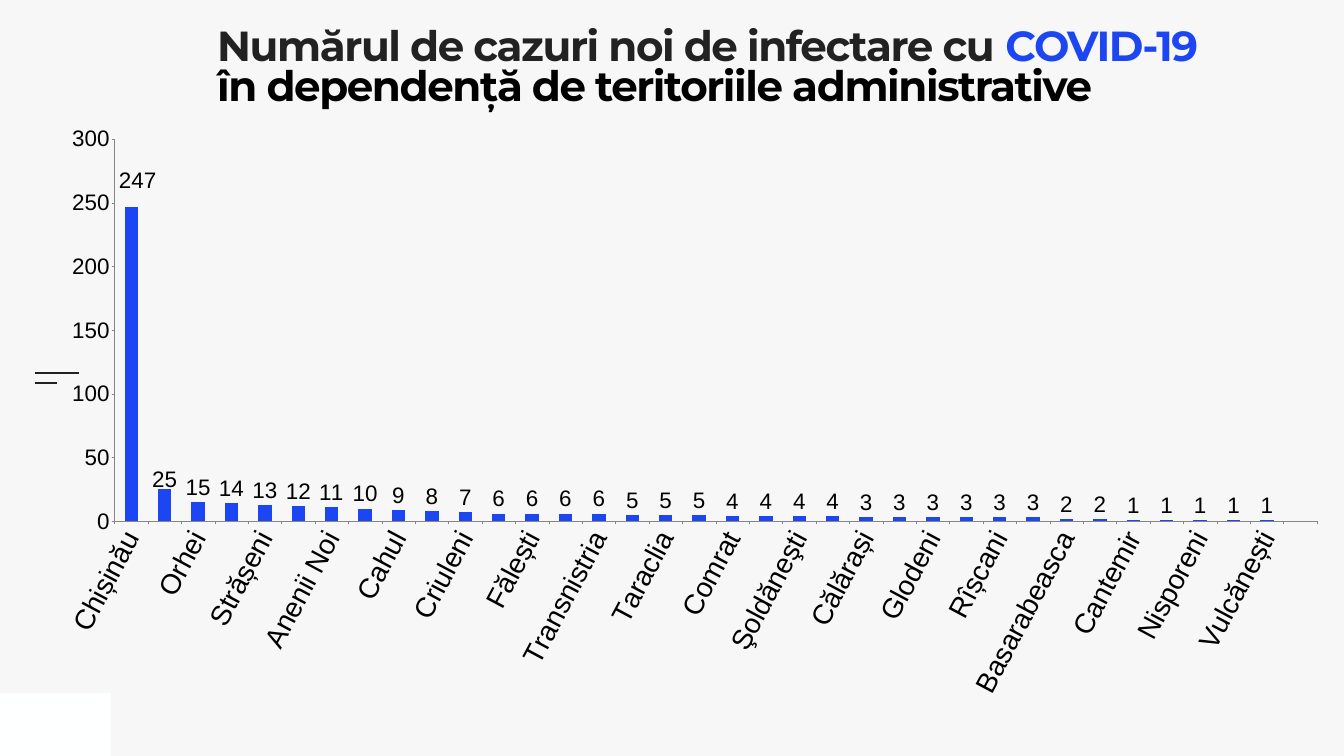
import dataclasses

import lxml.etree
import pptx
import pptx.chart.data
import pptx.dml.color
import pptx.enum.chart
import pptx.enum.shapes
import pptx.enum.text
import pptx.oxml.ns
import pptx.util

Cm, Pt = pptx.util.Cm, pptx.util.Pt
qn = pptx.oxml.ns.qn


@dataclasses.dataclass(frozen=True)
class Theme:
    """Colours, fonts and type sizes of the slide."""
    background: str = "F7F7F7"
    corner: str = "FEFFFF"
    ink: str = "222222"
    black: str = "000000"
    accent: str = "1D46F3"
    axis: str = "868686"
    title_font: str = "Montserrat"
    chart_font: str = "Arial"
    title_size: int = 60
    category_size: int = 40
    value_size: int = 32


@dataclasses.dataclass(frozen=True)
class Box:
    """A region of the slide in centimetres."""
    left: float
    top: float
    width: float
    height: float

    def lengths(self):
        """Return left, top, width and height as lengths."""
        return [Cm(side) for side in dataclasses.astuple(self)]


THEME = Theme()

CASES = {
    "Chișinău": 247, "Edineț": 25, "Orhei": 15, "Soroca": 14, "Strășeni": 13,
    "Ialoveni": 12, "Anenii Noi": 11, "Căușeni": 10, "Cahul": 9, "Hîncești": 8,
    "Criuleni": 7, "Drochia": 6, "Fălești": 6, "Rezina": 6, "Transnistria": 6,
    "Bălți": 5, "Taraclia": 5, "Ungheni": 5, "Comrat": 4, "Dondușeni": 4,
    "Şoldăneşti": 4, "Telenești": 4, "Călărași": 3, "Florești": 3, "Glodeni": 3,
    "Leova": 3, "Rîșcani": 3, "Ștefan Vodă": 3, "Basarabeasca": 2,
    "Ceadîr-Lunga": 2, "Cantemir": 1, "Cimișlia": 1, "Nisporeni": 1,
    "Ocnița": 1, "Vulcănești": 1, "": None,
}

TITLE = [
    [("Numărul de cazuri noi de infectare cu ", THEME.ink), ("COVID-19", THEME.accent)],
    [("în dependență de teritoriile administrative", THEME.black)],
]

LABEL_SHIFTS = {0: (0.005, -0.02), 1: (0, 0.008)}


def rgb(colour):
    """Turn a hex string into a colour."""
    return pptx.dml.color.RGBColor.from_string(colour)


def apply(target, values):
    """Set each named attribute on the target."""
    for name, value in values.items():
        setattr(target, name, value)


def style_font(font, size, colour, name, **more):
    """Give a font its size, colour and face."""
    apply(font, {"size": Pt(size), "name": name, **more})
    font.color.rgb = rgb(colour)


def add_layout(parent, position, **values):
    """Insert a manual layout at a child position of a chart element."""
    for old in parent.findall(qn("c:layout")):
        parent.remove(old)
    layout = lxml.etree.Element(qn("c:layout"))
    manual = lxml.etree.SubElement(layout, qn("c:manualLayout"))
    for name, value in values.items():
        lxml.etree.SubElement(manual, qn(f"c:{name}")).set("val", str(value))
    parent.insert(position, layout)


def build_corner(page, box):
    """Place the plain block in the lower left corner."""
    block = page.shapes.add_shape(pptx.enum.shapes.MSO_SHAPE.RECTANGLE, *box.lengths())
    block.shadow.inherit = False
    block.fill.solid()
    block.fill.fore_color.rgb = rgb(THEME.corner)
    block.line.fill.background()


def build_menu_mark(page, box):
    """Draw a long line over a half-length one."""
    for drop, share in ((0, 1), (box.height, 0.5)):
        level = Cm(box.top + drop)
        line = page.shapes.add_connector(
            pptx.enum.shapes.MSO_CONNECTOR.STRAIGHT,
            Cm(box.left), level, Cm(box.left + box.width * share), level)
        line.line.color.rgb = rgb(THEME.ink)
        line.line.width = Pt(3)
        lxml.etree.SubElement(line._element.spPr, qn("a:effectLst"))


def build_title(page, box):
    """Write the two-line title."""
    frame = page.shapes.add_textbox(*box.lengths()).text_frame
    apply(frame, {"word_wrap": True, "margin_left": 0, "margin_top": 0,
                  "margin_right": 0, "margin_bottom": 0})
    for number, line in enumerate(TITLE):
        para = frame.add_paragraph() if number else frame.paragraphs[0]
        apply(para, {"line_spacing": 0.8, "alignment": pptx.enum.text.PP_ALIGN.LEFT})
        for text, colour in line:
            span = para.add_run()
            span.text = text
            style_font(span.font, THEME.title_size, colour, THEME.title_font, bold=True)
            span._r.get_or_add_rPr().set("spc", "-200")


def style_axes(chart):
    """Format both axes and turn the category names."""
    tick = pptx.enum.chart.XL_TICK_MARK
    sizes = ((chart.category_axis, THEME.category_size), (chart.value_axis, THEME.value_size))
    for axis, size in sizes:
        apply(axis, {"has_major_gridlines": False, "major_tick_mark": tick.OUTSIDE,
                     "minor_tick_mark": tick.NONE})
        style_font(axis.tick_labels.font, size, THEME.black, THEME.chart_font)
        axis.format.line.color.rgb = rgb(THEME.axis)
        axis.format.line.width = Pt(0.75)
    apply(chart.value_axis, {"minimum_scale": 0, "maximum_scale": 300, "major_unit": 50})
    category = chart.category_axis._element
    category.find(qn("c:txPr")).find(qn("a:bodyPr")).set("rot", str(-62 * 60000))
    skip = lxml.etree.Element(qn("c:tickLblSkip"))
    skip.set("val", "2")
    category.find(qn("c:noMultiLvlLbl")).addprevious(skip)


def style_columns(plot):
    """Colour the columns and label them with their values."""
    apply(plot, {"gap_width": 150, "vary_by_categories": False, "has_data_labels": True})
    series = plot.series[0]
    series.format.fill.solid()
    series.format.fill.fore_color.rgb = rgb(THEME.accent)
    above = pptx.enum.chart.XL_LABEL_POSITION.OUTSIDE_END
    for labels in (plot.data_labels, series.data_labels):
        apply(labels, {"show_value": True, "position": above})
        style_font(labels.font, THEME.value_size, THEME.black, THEME.chart_font)
    for index, (across, down) in LABEL_SHIFTS.items():
        label = series.points[index].data_label
        style_font(label.font, THEME.value_size, THEME.black, THEME.chart_font)
        label.position = above
        element = series.data_labels._element.xpath(f"c:dLbl[c:idx/@val='{index}']")[0]
        add_layout(element, 1, x=across, y=down)


def build_chart(page, box):
    """Add the column chart of new cases by territory."""
    data = pptx.chart.data.CategoryChartData()
    data.categories = list(CASES)
    data.add_series("Series 1", list(CASES.values()))
    kind = pptx.enum.chart.XL_CHART_TYPE.COLUMN_CLUSTERED
    chart = page.shapes.add_chart(kind, *box.lengths(), data).chart
    apply(chart, {"has_legend": False, "has_title": False})
    style_font(chart.font, THEME.category_size, THEME.black, THEME.chart_font)
    style_axes(chart)
    style_columns(chart.plots[0])
    area = chart._chartSpace.chart.plotArea
    add_layout(area, 0, layoutTarget="inner", xMode="edge", yMode="edge",
               x=0.045, y=0.022, w=0.948, h=0.64)


def main():
    """Build the slide and save it."""
    deck = pptx.Presentation()
    apply(deck, {"slide_width": Cm(67.74), "slide_height": Cm(38.1)})
    page = deck.slides.add_slide(deck.slide_layouts[6])
    page.background.fill.solid()
    page.background.fill.fore_color.rgb = rgb(THEME.background)
    build_corner(page, Box(0, 34.95, 5.59, 3.15))
    build_menu_mark(page, Box(1.75, 18.82, 2.24, 0.46))
    build_title(page, Box(10.95, 1.47, 50.85, 6.93))
    build_chart(page, Box(2.9, 6.35, 63.93, 30.1))
    deck.save("out.pptx")


if __name__ == "__main__":
    main()
